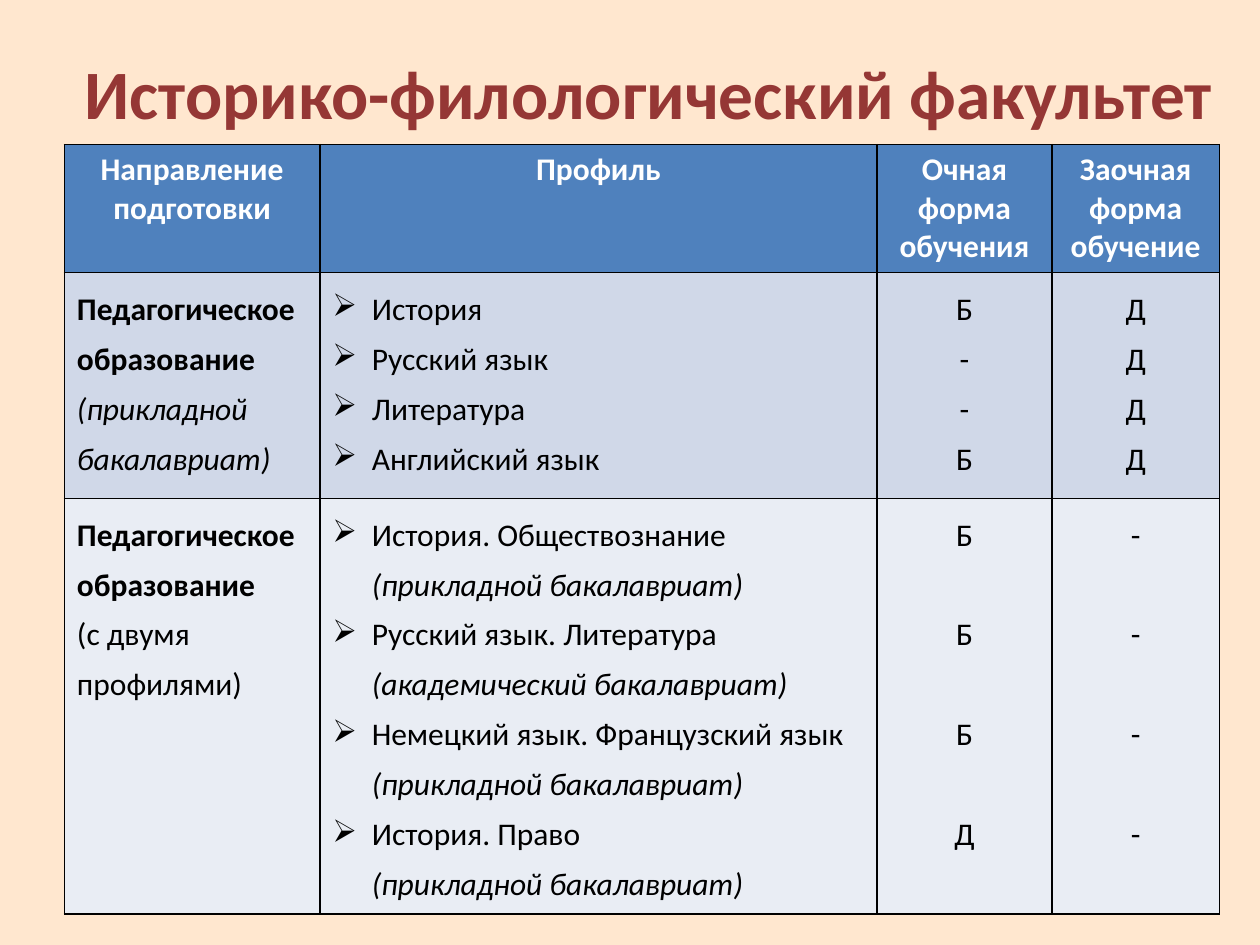
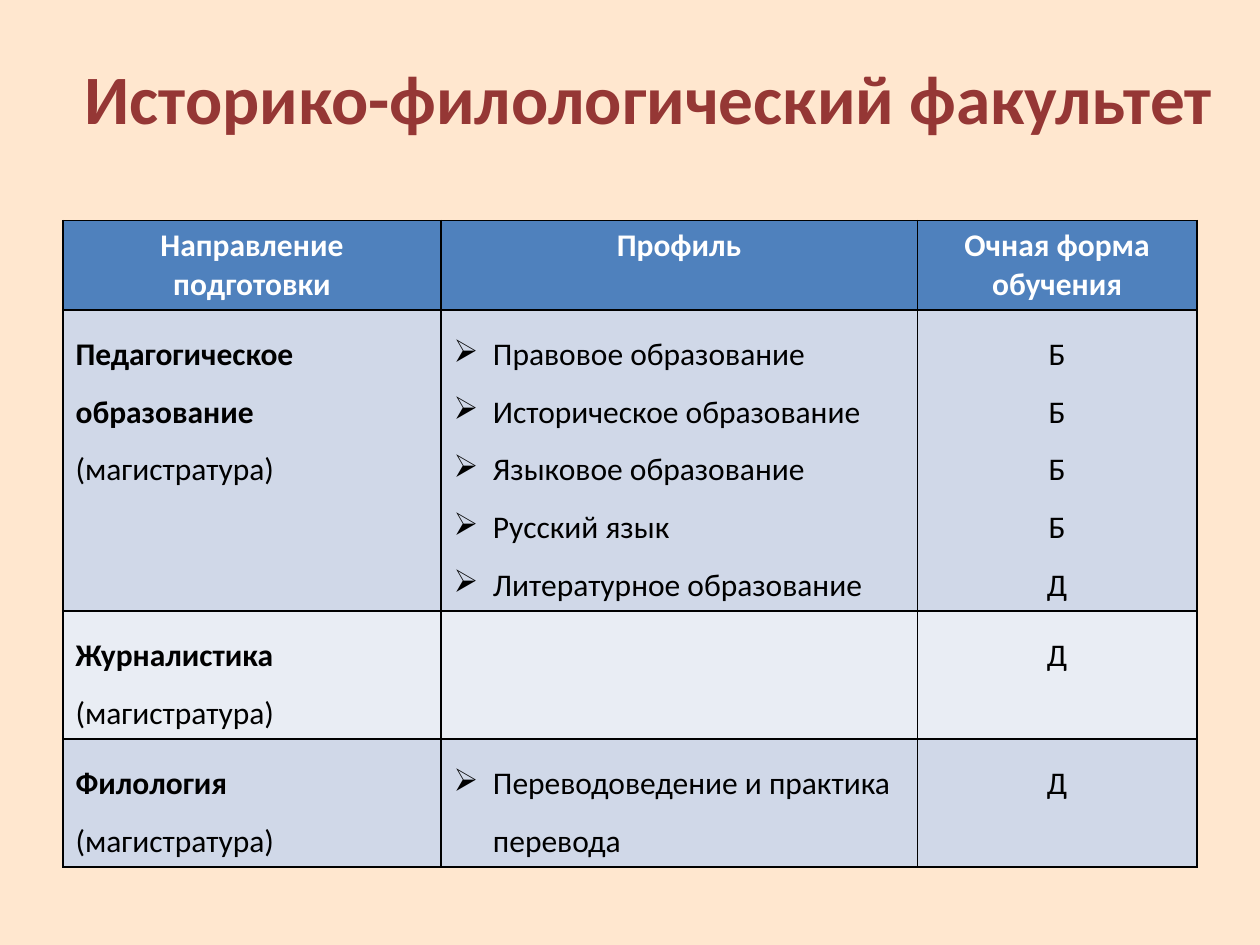
import dataclasses

import pptx
import pptx.dml.color
import pptx.enum.text
import pptx.oxml
import pptx.oxml.ns
import pptx.util

Pt = pptx.util.Pt
ALIGN = pptx.enum.text.PP_ALIGN


@dataclasses.dataclass(frozen=True)
class Theme:
    font: str = "Calibri"
    background: str = "FFE7CF"
    title: str = "953735"
    header: str = "4F81BD"
    header_text: str = "FFFFFF"
    bands: tuple = ("D0D8E8", "E9EDF4")
    text: str = "000000"
    border: str = "000000"
    border_width: float = 1
    title_size: float = 39.6
    body_size: float = 18
    bullet: str = "➢"
    bullet_indent: float = 22.5


THEME = Theme()
FACULTY = "Историко-филологический факультет"


def rgb(value):
    return pptx.dml.color.RGBColor.from_string(value)


# Text
def add_text(p, text, size=THEME.body_size, color=THEME.text, bold=False, italic=False):
    r = p.add_run()
    r.text = text
    r.font.name = THEME.font
    r.font.size = Pt(size)
    r.font.color.rgb = rgb(color)
    r.font.bold = bold
    r.font.italic = italic


def add_bullet(p):
    pPr = p._p.get_or_add_pPr()
    indent = Pt(THEME.bullet_indent)
    pPr.set("marL", str(indent))
    pPr.set("indent", str(-indent))
    bullet = pptx.oxml.parse_xml(
        f'<a:buChar {pptx.oxml.ns.nsdecls("a")} char="{THEME.bullet}"/>')
    pPr.append(bullet)


def cell_paragraphs(cell, count):
    tf = cell.text_frame
    return [tf.paragraphs[0] if i == 0 else tf.add_paragraph() for i in range(count)]


# Cell contents
def fill_header(cell, text):
    lines = text.split("\n")
    for p, line in zip(cell_paragraphs(cell, len(lines)), lines):
        p.alignment = ALIGN.CENTER
        add_text(p, line, color=THEME.header_text, bold=True)


def fill_direction(cell, direction, spacing):
    name, note, italic = direction
    p_name, p_note = cell_paragraphs(cell, 2)
    add_text(p_name, name, bold=True)
    add_text(p_note, note, italic=italic)
    p_name.line_spacing = p_note.line_spacing = spacing


def fill_profiles(cell, profiles, spacing):
    for p, (name, level) in zip(cell_paragraphs(cell, len(profiles)), profiles):
        add_bullet(p)
        p.line_spacing = spacing
        add_text(p, name)
        if level:
            p.add_line_break()
            add_text(p, level, italic=True)


def fill_forms(cell, marks, spacing, gap):
    for i, (p, mark) in enumerate(zip(cell_paragraphs(cell, len(marks)), marks)):
        p.alignment = ALIGN.CENTER
        p.line_spacing = spacing
        if i and gap:
            p.space_before = Pt(gap)
        add_text(p, mark)


# Cell appearance
def style_cell(cell, color):
    cell.fill.solid()
    cell.fill.fore_color.rgb = rgb(color)
    tcPr = cell._tc.get_or_add_tcPr()
    for i, side in enumerate("LRTB"):
        tcPr.insert(i, pptx.oxml.parse_xml(
            f'<a:ln{side} {pptx.oxml.ns.nsdecls("a")} w="{Pt(THEME.border_width)}">'
            f'<a:solidFill><a:srgbClr val="{THEME.border}"/></a:solidFill></a:ln{side}>'))


# Slide parts
def add_slide(prs, title_height):
    s = prs.slides.add_slide(prs.slide_layouts[5])
    s.background.fill.solid()
    s.background.fill.fore_color.rgb = rgb(THEME.background)
    sp = s.shapes.title
    sp.left, sp.top, sp.width, sp.height = Pt(36), Pt(21.6), Pt(669.6), Pt(title_height)
    tf = sp.text_frame
    tf.auto_size = pptx.enum.text.MSO_AUTO_SIZE.NONE
    tf.vertical_anchor = pptx.enum.text.MSO_ANCHOR.MIDDLE
    p = tf.paragraphs[0]
    p.alignment = ALIGN.CENTER
    add_text(p, FACULTY, size=THEME.title_size, color=THEME.title, bold=True)
    return s


def add_programmes(s, left, top, widths, heights, headers, rows, spacing):
    """Each row holds: direction, profiles, marks per form of study, gap between marks."""
    frame = s.shapes.add_table(len(heights), len(widths), Pt(left), Pt(top),
                               Pt(sum(widths)), Pt(sum(heights)))
    table = frame.table
    table.horz_banding = False
    for column, width in zip(table.columns, widths):
        column.width = Pt(width)
    for row, height in zip(table.rows, heights):
        row.height = Pt(height)
    for c, header in enumerate(headers):
        fill_header(table.cell(0, c), header)
        style_cell(table.cell(0, c), THEME.header)
    for r, (direction, profiles, forms, gap) in enumerate(rows, start=1):
        fill_direction(table.cell(r, 0), direction, spacing)
        fill_profiles(table.cell(r, 1), profiles, spacing)
        for c, marks in enumerate(forms, start=2):
            fill_forms(table.cell(r, c), marks, spacing, gap)
        for c in range(len(widths)):
            style_cell(table.cell(r, c), THEME.bands[(r - 1) % 2])


def plain(*names):
    return [(name, "") for name in names]


def main():
    prs = pptx.Presentation()
    prs.slide_width, prs.slide_height = Pt(720), Pt(540)

    # Bachelor programmes
    pedagogy = "Педагогическое образование"
    applied = "(прикладной бакалавриат)"
    s = add_slide(prs, 61.2)
    add_programmes(
        s, 36.8, 82.6, (146, 318.4, 100, 95.6), (73.1, 129, 237.6),
        ("Направление подготовки", "Профиль", "Очная форма обучения",
         "Заочная форма обучение"),
        [((pedagogy, applied, True),
          plain("История", "Русский язык", "Литература", "Английский язык"),
          ("Б--Б", "ДДДД"), 0),
         ((pedagogy, "(с двумя профилями)", False),
          [("История. Обществознание", applied),
           ("Русский язык. Литература", "(академический бакалавриат)"),
           ("Немецкий язык. Французский язык", applied),
           ("История. Право", applied)],
          ("БББД", "----"), 28.5)],
        spacing=1.3)

    # Master programmes
    master = "(магистратура)"
    s = add_slide(prs, 67)
    add_programmes(
        s, 36, 126, (216, 272.2, 159.8), (51.2, 172, 73.1, 73.1),
        ("Направление\nподготовки", "Профиль", "Очная форма\nобучения"),
        [((pedagogy, master, False),
          plain("Правовое образование", "Историческое образование",
                "Языковое образование", "Русский язык", "Литературное образование"),
          ("ББББД",), 0),
         (("Журналистика", master, False), [], ("Д",), 0),
         (("Филология", master, False),
          plain("Переводоведение и практика перевода"), ("Д",), 0)],
        spacing=1.5)

    prs.save("out.pptx")


if __name__ == "__main__":
    main()
